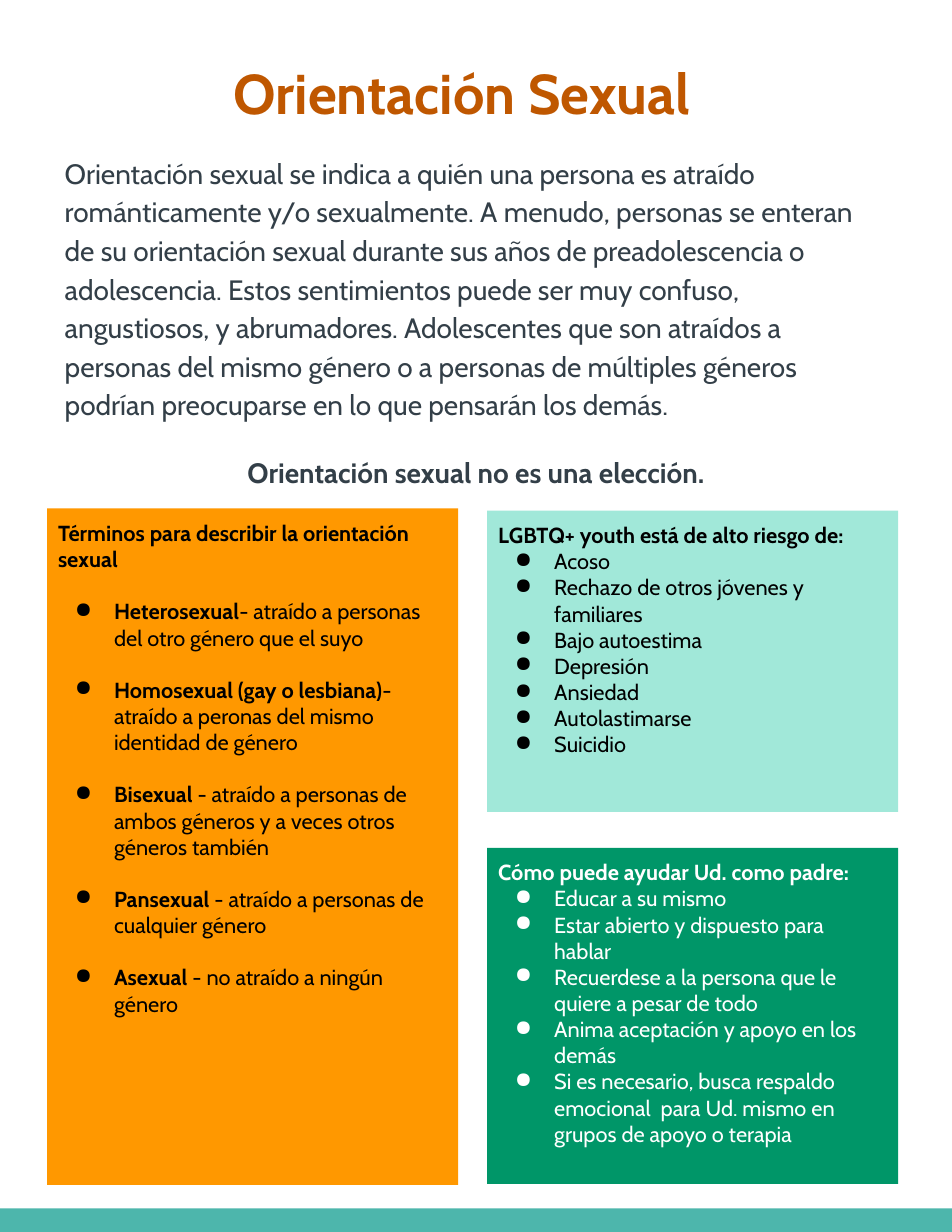
from dataclasses import dataclass

from lxml.etree import SubElement
from pptx import Presentation
from pptx.dml.color import RGBColor
from pptx.enum.shapes import MSO_SHAPE
from pptx.enum.text import MSO_ANCHOR, PP_ALIGN
from pptx.oxml.ns import qn
from pptx.util import Inches, Pt


@dataclass(frozen=True)
class Theme:
    font: str = "Cabin"
    title_size: int = 36
    body_size: int = 18
    card_size: int = 14
    blank_line: float = 16.8
    title: str = "BF5700"
    body: str = "333F48"
    black: str = "000000"
    white: str = "FFFFFF"
    orange: str = "FF9800"
    mint: str = "A1E8D9"
    green: str = "009668"
    footer: str = "4DB6AC"


THEME = Theme()

INTRO = (
    "Orientación sexual se indica a quién una persona es atraído románticamente "
    "y/o sexualmente. A menudo, personas se enteran de su orientación sexual durante "
    "sus años de preadolescencia o adolescencia. Estos sentimientos puede ser muy "
    "confuso, angustiosos, y abrumadores. Adolescentes que son atraídos a personas "
    "del mismo género o a personas de múltiples géneros podrían preocuparse en lo "
    "que pensarán los demás."
)

# Each item is a pair: bold term, plain text
TERMS = [
    ("Heterosexual", "- atraído a personas del otro género que el suyo"),
    ("Homosexual (gay o lesbiana)", "- atraído a peronas del mismo identidad de género"),
    ("Bisexual ", "- atraído a personas de ambos géneros y a veces otros géneros también"),
    ("Pansexual ", "- atraído a personas de cualquier género"),
    ("Asexual ", "- no atraído a ningún género"),
]
RISKS = [("", text) for text in (
    "Acoso", "Rechazo de otros jóvenes y familiares", "Bajo autoestima",
    "Depresión", "Ansiedad", "Autolastimarse", "Suicidio",
)]
HELP = [("", text) for text in (
    "Educar a su mismo",
    "Estar abierto y dispuesto para hablar",
    "Recuerdese a la persona que le quiere a pesar de todo",
    "Anima aceptación y apoyo en los demás",
    "Si es necesario, busca respaldo emocional  para Ud. mismo en grupos de apoyo o terapia",
)]


def set_values(target, values):
    for name, value in values.items():
        setattr(target, name, value)


def set_frame(shape, right_inset):
    inset = Inches(0.1)
    set_values(shape.text_frame, {
        "word_wrap": True, "vertical_anchor": MSO_ANCHOR.TOP,
        "margin_left": inset, "margin_top": inset,
        "margin_right": Inches(right_inset), "margin_bottom": inset,
    })
    return shape.text_frame


def add_run(paragraph, text, size, color, bold=False):
    run = paragraph.add_run()
    run.text = text
    set_values(run.font, {"name": THEME.font, "size": Pt(size), "bold": bold})
    run.font.color.rgb = RGBColor.from_string(color)


def add_text(slide, box, text, size, color, bold=False, right_inset=0.1, **layout):
    shape = slide.shapes.add_textbox(*map(Inches, box))
    paragraph = set_frame(shape, right_inset).paragraphs[0]
    set_values(paragraph, layout)
    add_run(paragraph, text, size, color, bold)


def add_rectangle(slide, box, fill):
    shape = slide.shapes.add_shape(MSO_SHAPE.RECTANGLE, *map(Inches, box))
    shape.shadow.inherit = False
    shape.fill.solid()
    shape.fill.fore_color.rgb = RGBColor.from_string(fill)
    shape.line.fill.background()
    return shape


def add_bullet(paragraph, color):
    properties = paragraph._p.get_or_add_pPr()
    properties.set("marL", str(Inches(0.5)))
    properties.set("indent", str(Inches(-0.35)))
    bullet_color = SubElement(properties, qn("a:buClr"))
    SubElement(bullet_color, qn("a:srgbClr"), val=color)
    SubElement(properties, qn("a:buChar"), char="●")


def add_card(slide, box, fill, color, heading, items, gap=0):
    frame = set_frame(add_rectangle(slide, box, fill), right_inset=0.2)
    paragraph = frame.paragraphs[0]
    paragraph.alignment = PP_ALIGN.LEFT
    add_run(paragraph, heading, THEME.card_size, color, bold=True)
    for term, text in items:
        paragraph = frame.add_paragraph()
        add_bullet(paragraph, color)
        set_values(paragraph, {"alignment": PP_ALIGN.LEFT, "space_before": Pt(gap)})
        if term:
            add_run(paragraph, term, THEME.card_size, color, bold=True)
        add_run(paragraph, text, THEME.card_size, color)


def main():
    presentation = Presentation()
    set_values(presentation, {"slide_width": Inches(8.5), "slide_height": Inches(11)})
    slide = presentation.slides.add_slide(presentation.slide_layouts[6])
    spaced = {"line_spacing": 1.15, "space_after": Pt(16)}

    # Footer band
    add_rectangle(slide, (0, 10.79, 8.5, 0.21), THEME.footer)

    # Title and introduction
    add_text(slide, (0.68, 0.42, 7.14, 0.82), "Orientación Sexual", THEME.title_size,
             THEME.title, bold=True, right_inset=0.35, alignment=PP_ALIGN.CENTER)
    add_text(slide, (0.48, 1.25, 7.54, 3), INTRO, THEME.body_size, THEME.body, **spaced)

    # Cards
    add_card(slide, (4.35, 7.57, 3.67, 3), THEME.green, THEME.white,
             "Cómo puede ayudar Ud. como padre:", HELP)
    add_card(slide, (0.42, 4.54, 3.67, 6.04), THEME.orange, THEME.black,
             "Términos para describir la orientación sexual", TERMS, THEME.blank_line)
    add_card(slide, (4.35, 4.56, 3.67, 2.69), THEME.mint, THEME.black,
             "LGBTQ+ youth está de alto riesgo de:", RISKS)

    # Key statement
    add_text(slide, (0.38, 3.92, 7.74, 0.49), "Orientación sexual no es una elección.",
             THEME.body_size, THEME.body, bold=True, alignment=PP_ALIGN.CENTER, **spaced)

    presentation.save("out.pptx")


if __name__ == "__main__":
    main()
